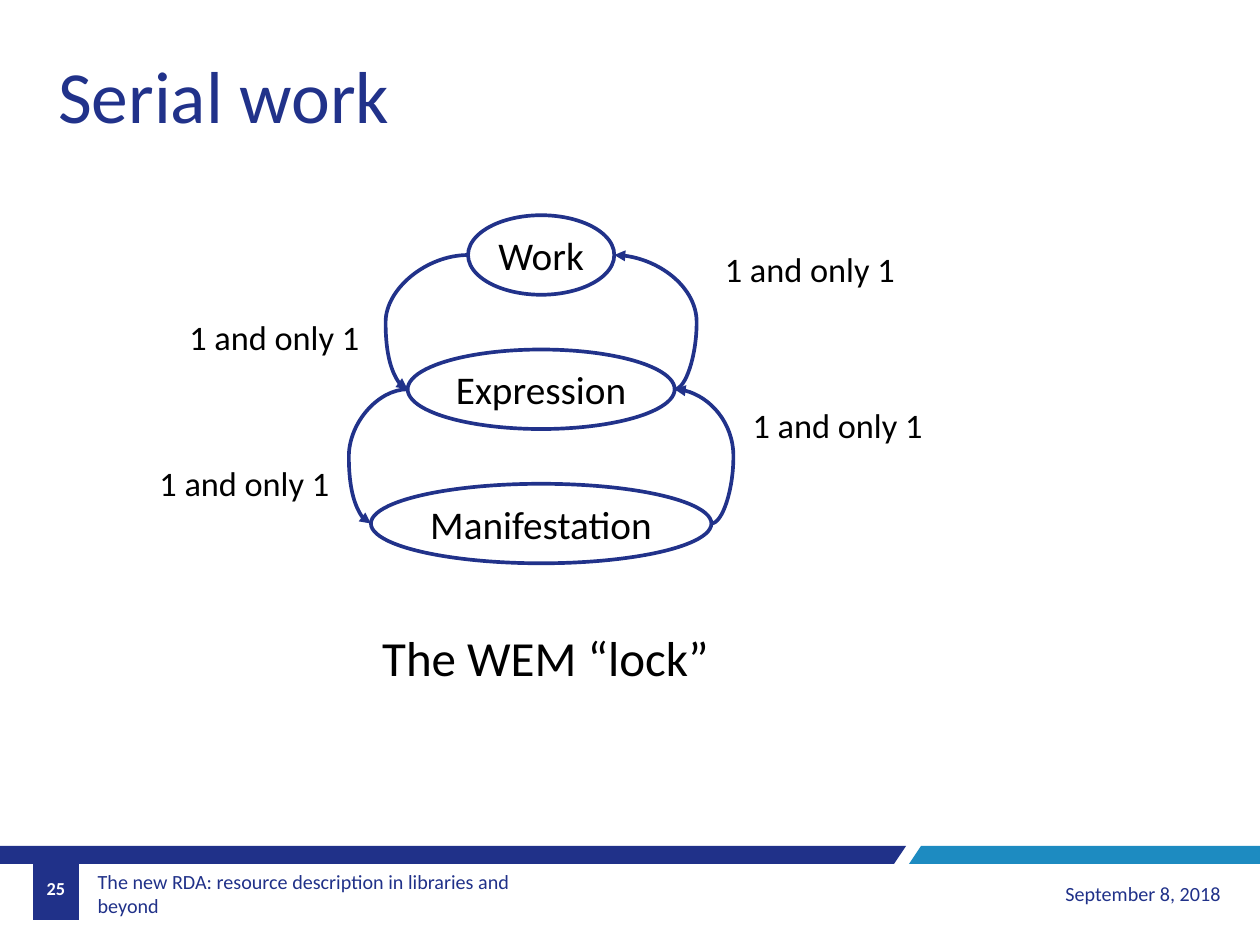
"""Build the slide on the WEM lock of a serial work, on a grid of 84 by 63 cells."""
from lxml import etree
from pptx import Presentation
from pptx.dml.color import RGBColor
from pptx.enum.shapes import MSO_CONNECTOR, MSO_SHAPE
from pptx.enum.text import MSO_ANCHOR, PP_ALIGN
from pptx.oxml.ns import qn
from pptx.util import Inches, Pt

LEFT, CENTER, RIGHT = PP_ALIGN.LEFT, PP_ALIGN.CENTER, PP_ALIGN.RIGHT
TOP, MIDDLE = MSO_ANCHOR.TOP, MSO_ANCHOR.MIDDLE
ELLIPSE, CURVE = MSO_SHAPE.OVAL, MSO_CONNECTOR.CURVE
NAVY = RGBColor(0x21, 0x32, 0x8A)
BAR_NAVY = RGBColor(0x20, 0x31, 0x89)
BAR_BLUE = RGBColor(0x1D, 0x8B, 0xC1)
BLACK = RGBColor(0, 0, 0)
WHITE = RGBColor(0xFF, 0xFF, 0xFF)
FONT = "Calibri"

presentation = Presentation()
presentation.slide_width = Inches(14.28)
presentation.slide_height = Inches(10.71)
CELL = presentation.slide_width / 84
slide = presentation.slides.add_slide(presentation.slide_layouts[6])


def cells(*counts):
    return [round(count * CELL) for count in counts]


def write(text, box, size, color=BLACK, align=LEFT, anchor=TOP, bold=False, wrap=False, shape=None):
    shape = shape or slide.shapes.add_textbox(*cells(*box))
    frame = shape.text_frame
    frame.word_wrap = wrap
    frame.vertical_anchor = anchor
    paragraph = frame.paragraphs[0]
    paragraph.alignment = align
    run = paragraph.add_run()
    run.text = text
    run.font.name, run.font.size, run.font.bold = FONT, Pt(size), bold
    run.font.color.rgb = color
    return shape


BAR_TOP, BAR_BOTTOM = 56.4, 57.6
footer_parts = [
    (BAR_NAVY, [(60.4, BAR_TOP), (0, BAR_TOP), (0, BAR_BOTTOM), (59.6, BAR_BOTTOM)]),
    (BAR_BLUE, [(84, BAR_TOP), (61.4, BAR_TOP), (60.6, BAR_BOTTOM), (84, BAR_BOTTOM)]),
    (BAR_NAVY, [(2.2, 61.35), (5.25, 61.35), (5.25, BAR_TOP), (2.2, BAR_TOP)]),
]
for color, corners in footer_parts:
    points = [cells(*corner) for corner in corners]
    builder = slide.shapes.build_freeform(*points[0])
    builder.add_line_segments(points[1:], close=True)
    part = builder.convert_to_shape()
    part.shadow.inherit = False
    part.fill.solid()
    part.fill.fore_color.rgb = color
    part.line.fill.background()

footer = write("The new RDA: resource description in libraries and beyond",
               (6.1, 57.95, 32.45, 3.25), 16.4, BAR_NAVY, anchor=MIDDLE, wrap=True)
footer.text_frame.margin_left = footer.text_frame.margin_right = Inches(0.07)
footer.text_frame.margin_top = footer.text_frame.margin_bottom = Inches(0.04)
write("September 8, 2018", (60.4, 57.95, 21.55, 3.25), 16.4, BAR_NAVY, RIGHT, MIDDLE, wrap=True)
write("25", (2.2, 57.6, 3.05, 3.25), 14.9, WHITE, CENTER, MIDDLE, bold=True)
write("Serial work", (3.3, 3.05, 23.55, 6.55), 60, NAVY)

AXIS, FIRST_ROW, ROW_STEP = 36.08, 17, 8.95
ELLIPSE_HEIGHT, BULGE = 5.3, 1.47
entities = [("Work", 9.75), ("Expression", 17.8), ("Manifestation", 22.7)]
rows = [FIRST_ROW + ROW_STEP * index for index in range(len(entities))]
for (name, width), row in zip(entities, rows):
    box = (AXIS - width / 2, row - ELLIPSE_HEIGHT / 2, width, ELLIPSE_HEIGHT)
    ellipse = slide.shapes.add_shape(ELLIPSE, *cells(*box))
    ellipse.shadow.inherit = False
    ellipse.fill.solid()
    ellipse.fill.fore_color.rgb = WHITE
    ellipse.line.color.rgb = NAVY
    ellipse.line.width = Pt(3)
    write(name, box, 32, align=CENTER, anchor=MIDDLE, shape=ellipse)

for index in range(len(entities) - 1):
    upper, lower = entities[index][1] / 2, entities[index + 1][1] / 2
    top, bottom = rows[index:index + 2]
    reach = BULGE / (lower - upper)
    arrows = [((AXIS - upper, top, AXIS - lower, bottom), 1 + reach),
              ((AXIS + lower, bottom, AXIS + upper, top), -reach)]
    for ends, bend in arrows:
        arrow = slide.shapes.add_connector(CURVE, *cells(*ends))
        arrow.line.color.rgb = NAVY
        arrow.line.width = Pt(3)
        properties = arrow.element.spPr
        etree.SubElement(arrow.line._get_or_add_ln(), qn("a:tailEnd"), type="triangle")
        etree.SubElement(properties, qn("a:effectLst"))
        adjustments = properties.find(qn("a:prstGeom")).find(qn("a:avLst"))
        etree.SubElement(adjustments, qn("a:gd"), name="adj1", fmla=f"val {round(bend * 100000)}")

for column, row in [(47.75, 16.25), (49.6, 26.65), (12.05, 20.8), (10.05, 30.55)]:
    write("1 and only 1", (column, row, 12.65, 3.35), 28)
write("The WEM “lock”", (24.9, 41.55, 23.1, 4.5), 40)

presentation.save("out.pptx")
